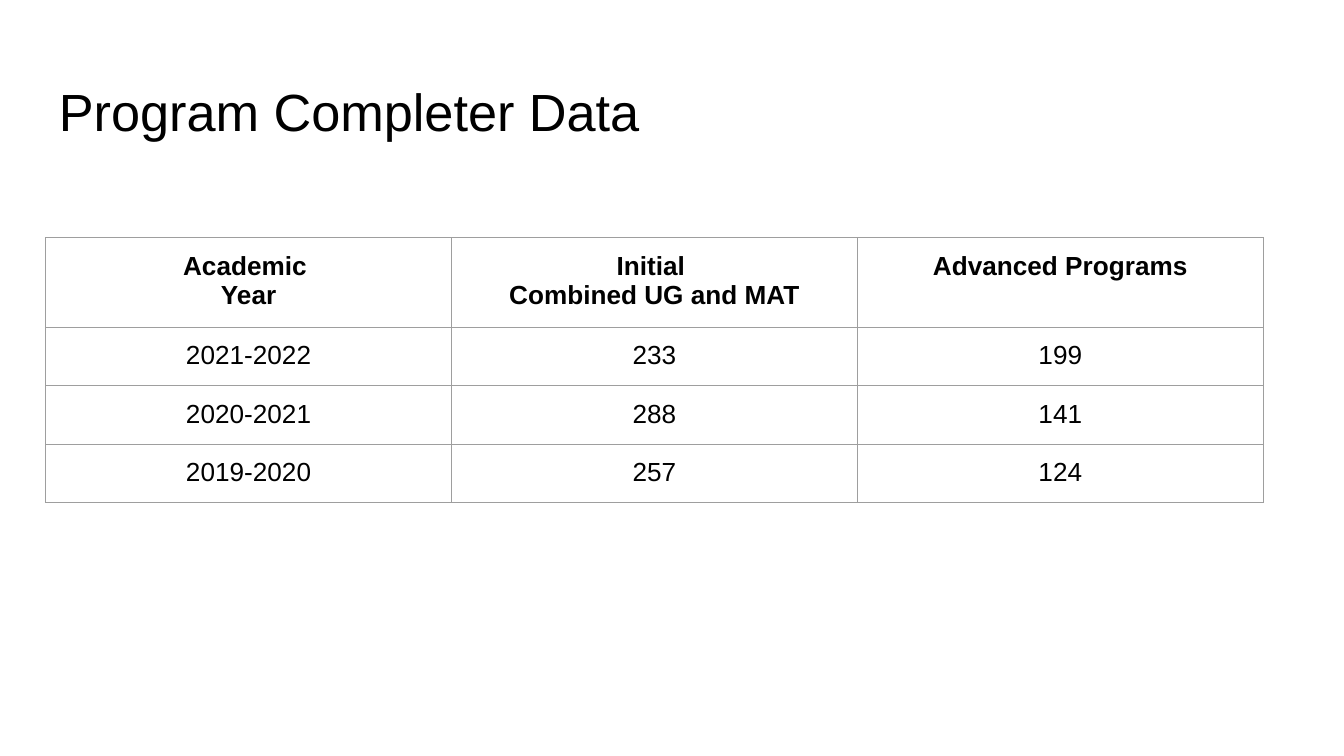
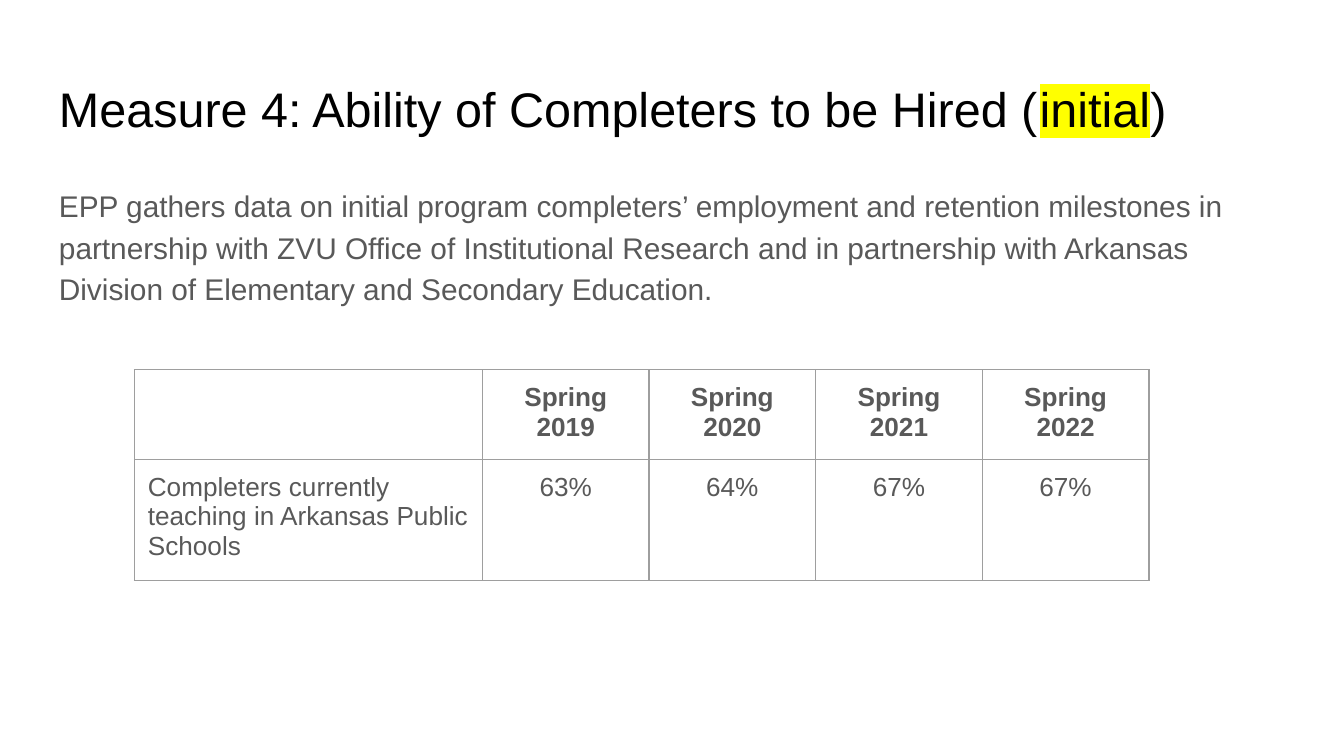
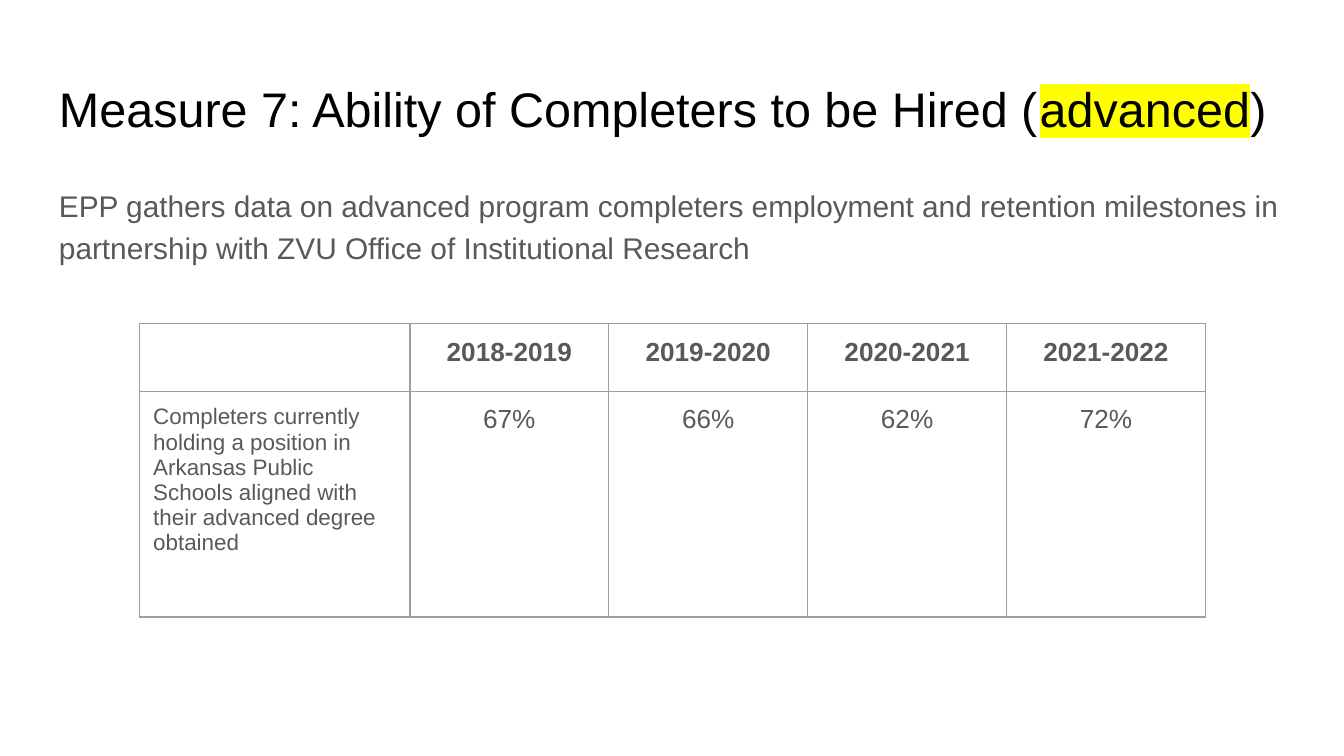
from lxml.etree import SubElement
from pptx import Presentation
from pptx.dml.color import RGBColor
from pptx.enum.text import PP_ALIGN
from pptx.oxml.ns import qn
from pptx.util import Inches, Pt

COLORS = {"title": "000000", "body": "595959", "border": "9E9E9E", "highlight": "FFFF00"}
FONT = "Arial"
MARGIN = Inches(0.1)
BORDER_WIDTH = Pt(0.75)

SLIDES = [
    {
        "title": ["Program Completer Data"],
        "title_size": 28,
        "table_at": (0.34, 1.77),
        "columns": [3.02] * 3,
        "row_heights": [0.42] * 4,
        "table_color": "title",
        "rows": [
            ["Academic \nYear", "Initial \nCombined UG and MAT", "Advanced Programs"],
            ["2021-2022", "233", "199"],
            ["2020-2021", "288", "141"],
            ["2019-2020", "257", "124"],
        ],
    },
    {
        "title": ["Measure 4: Ability of Completers to be Hired (", "initial", ")"],
        "title_size": 26,
        "body": "EPP gathers data on initial program completers’ employment and retention "
                "milestones in partnership with ZVU Office of Institutional Research and in "
                "partnership with Arkansas Division of Elementary and Secondary Education.",
        "body_height": 3.74,
        "space_after": 16,
        "table_at": (1, 2.75),
        "columns": [2.59] + [1.24] * 4,
        "row_heights": [0.43, 0.31],
        "table_color": "body",
        "label_size": 14,
        "rows": [
            ["", "Spring 2019", "Spring 2020", "Spring 2021", "Spring 2022"],
            ["Completers currently teaching in Arkansas Public Schools",
             "63%", "64%", "67%", "67%"],
        ],
    },
    {
        "title": ["Measure 7: Ability of Completers to be Hired (", "advanced", ")"],
        "title_size": 26,
        "body": "EPP gathers data on advanced program completers employment and retention "
                "milestones in partnership with ZVU Office of Institutional Research",
        "body_height": 0.87,
        "space_after": 0,
        "table_at": (1.04, 2.41),
        "columns": [2.01] + [1.48] * 4,
        "row_heights": [0.45, 1.68],
        "table_color": "body",
        "label_size": 12,
        "rows": [
            ["", "2018-2019", "2019-2020", "2020-2021", "2021-2022"],
            ["Completers currently holding a position in Arkansas Public Schools "
             "aligned with their advanced degree obtained",
             "67%", "66%", "62%", "72%"],
        ],
    },
]


def add_run(para, text, size, color, bold=False):
    span = para.add_run()
    span.text = text
    span.font.name = FONT
    span.font.size = Pt(size)
    span.font.bold = bold
    span.font.color.rgb = RGBColor.from_string(COLORS[color])
    return span


def add_text_box(page, top, height):
    """Add a full-width box and return its first paragraph."""
    box = page.shapes.add_textbox(Inches(0.34), Inches(top), Inches(9.32), Inches(height))
    frame = box.text_frame
    frame.word_wrap = True
    frame.margin_left = frame.margin_right = MARGIN
    frame.margin_top = frame.margin_bottom = MARGIN
    return frame.paragraphs[0]


deck = Presentation()
deck.slide_width = Inches(10)
deck.slide_height = Inches(5.625)

# Default text styles use the deck font, so that row heights follow it
for styles in (deck.element, deck.slide_master.element):
    for latin in styles.iter(qn("a:latin")):
        latin.set("typeface", FONT)

for content in SLIDES:
    page = deck.slides.add_slide(deck.slide_layouts[6])

    # Title, with its second run highlighted
    para = add_text_box(page, 0.49, 0.63)
    for index, text in enumerate(content["title"]):
        span = add_run(para, text, content["title_size"], "title")
        if index == 1:
            properties = span._r.get_or_add_rPr()
            highlight = SubElement(properties, qn("a:highlight"))
            SubElement(highlight, qn("a:srgbClr"), val=COLORS["highlight"])
            properties.find(qn("a:solidFill")).addnext(highlight)

    # Body text
    if "body" in content:
        para = add_text_box(page, 1.26, content["body_height"])
        para.line_spacing = 1.15
        para.space_after = Pt(content["space_after"])
        add_run(para, content["body"], 16, "body")

    # Table
    left, top = content["table_at"]
    columns, heights, rows = content["columns"], content["row_heights"], content["rows"]
    table = page.shapes.add_table(
        len(rows), len(columns), Inches(left), Inches(top),
        Inches(sum(columns)), Inches(sum(heights))).table
    table.first_row = table.horz_banding = False
    for column, width in zip(table.columns, columns):
        column.width = Inches(width)
    for row, height in zip(table.rows, heights):
        row.height = Inches(height)

    for row_index, row in enumerate(rows):
        for column_index, text in enumerate(row):
            cell = table.cell(row_index, column_index)
            cell.margin_left = cell.margin_right = MARGIN
            cell.margin_top = cell.margin_bottom = MARGIN
            for side in ("a:lnL", "a:lnR", "a:lnT", "a:lnB"):
                line = SubElement(cell._tc.get_or_add_tcPr(), qn(side), w=str(BORDER_WIDTH))
                fill = SubElement(line, qn("a:solidFill"))
                SubElement(fill, qn("a:srgbClr"), val=COLORS["border"])
            cell.fill.background()
            if not text:
                continue

            is_label = "label_size" in content and row_index > 0 and column_index == 0
            size = content["label_size"] if is_label else 14
            for line_index, line_text in enumerate(text.split("\n")):
                frame = cell.text_frame
                para = frame.add_paragraph() if line_index else frame.paragraphs[0]
                para.alignment = PP_ALIGN.LEFT if is_label else PP_ALIGN.CENTER
                add_run(para, line_text, size, content["table_color"], bold=row_index == 0)

deck.save("out.pptx")
